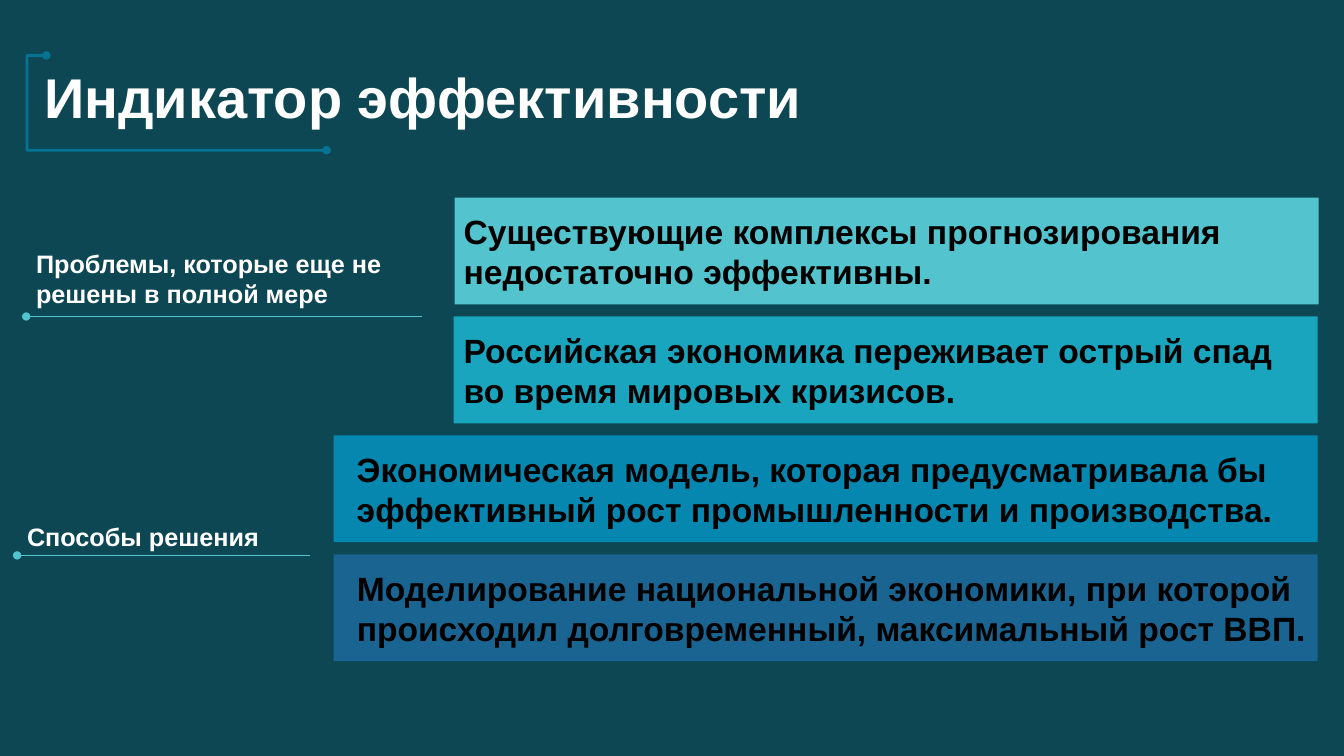
from lxml import etree
from pptx import Presentation
from pptx import util as u
from pptx.dml import color
from pptx.enum import shapes, text
from pptx.oxml import ns

# Content
TITLE = "Индикатор эффективности"
# bar left, bar width, fill, text left, text width, text
BARS = [
    (4.51, 8.57, "53C3CD", 4.5, 9.45,
     "Существующие комплексы прогнозирования недостаточно эффективны."),
    (4.5, 8.57, "19A5BE", 4.5, 8.57,
     "Российская экономика переживает острый спад во время мировых кризисов."),
    (3.31, 9.76, "0587AF", 3.44, 9.47,
     "Экономическая модель, которая предусматривала бы эффективный рост "
     "промышленности и производства."),
    (3.31, 9.76, "196491", 3.44, 9.62,
     "Моделирование национальной экономики, при которой происходил "
     "долговременный, максимальный рост ВВП."),
]
# left, top, text height, line end (x, y), text
LABELS = [
    (0.26, 2.41, 0.71, (4.19, 3.14), "Проблемы, которые еще не решены в полной мере"),
    (0.17, 5.12, 0.4, (3.07, 5.51), "Способы решения"),
]
TOP, STEP, HIGH = 1.96, 1.18, 1.06
INSET, TALL = 0.08, 0.91

deck = Presentation()
deck.slide_width, deck.slide_height = u.Inches(13.33), u.Inches(7.5)
slide = deck.slides.add_slide(deck.slide_layouts[6])


def tint(code):
    return color.RGBColor.from_string(code)


def inches(*nums):
    return [u.Inches(n) for n in nums]


def add_rect(box, fill):
    rect = slide.shapes.add_shape(shapes.MSO_SHAPE.RECTANGLE, *inches(*box))
    rect.shadow.inherit = False
    rect.fill.solid()
    rect.fill.fore_color.rgb = tint(fill)
    rect.line.fill.background()


def add_text(words, box, size=24, ink="000000"):
    frame = slide.shapes.add_textbox(*inches(*box)).text_frame
    frame.word_wrap = True
    frame.auto_size = text.MSO_AUTO_SIZE.SHAPE_TO_FIT_TEXT
    run = frame.paragraphs[0].add_run()
    run.text = words
    run.font.name, run.font.size, run.font.bold = "Arial", u.Pt(size), True
    run.font.color.rgb = tint(ink)


def add_line(kind, start, end, ink, width, ends):
    link = slide.shapes.add_connector(kind, *inches(*start, *end))
    link.line.color.rgb = tint(ink)
    link.line.width = u.Pt(width)
    for tag in ends:
        etree.SubElement(link.line._get_or_add_ln(), ns.qn(tag), type="oval")
    etree.SubElement(link._element.spPr, ns.qn("a:effectLst"))
    return link


# Backdrop
add_rect((-0.04, -0.03, 13.38, 7.55), "0D4754")

# Title and its bracket
add_text(TITLE, (0.34, 0.57, 8.32, 0.77), size=40, ink="FFFFFF")
hook = add_line(shapes.MSO_CONNECTOR.ELBOW, (0.46, 0.55), (3.24, 1.49),
                "0587AF", 2, ("a:headEnd", "a:tailEnd"))
props = hook._element.spPr
guides = props.find(ns.qn("a:prstGeom")).get_or_add_avLst()
etree.SubElement(guides, ns.qn("a:gd"), name="adj1", fmla="val -6900")
shade = props.find(".//" + ns.qn("a:srgbClr"))
etree.SubElement(shade, ns.qn("a:alpha"), val="70000")

# Bars with statements
for row, (left, wide, fill, edge, span, words) in enumerate(BARS):
    top = TOP + row * STEP
    add_rect((left, top, wide, HIGH), fill)
    add_text(words, (edge, top + INSET, span, TALL))

# Labels with underlines
for left, top, tall, end, words in LABELS:
    add_text(words, (left, top, 3.94, tall), size=18, ink="FFFFFF")
    add_line(shapes.MSO_CONNECTOR.STRAIGHT, (left, round(end[1], 2)), end,
             "53C3CD", 0.5, ("a:headEnd",))

deck.save("out.pptx")
